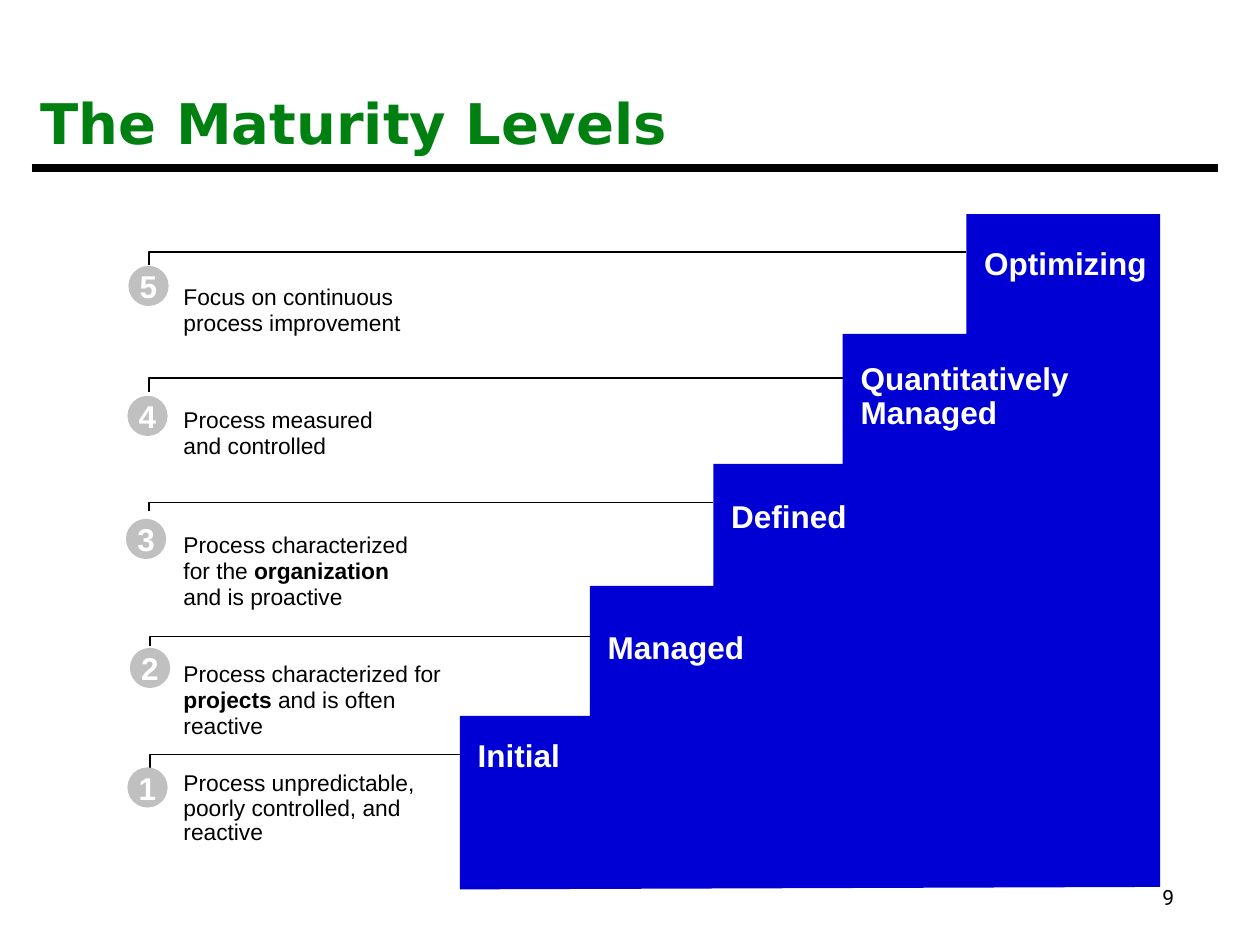
import pptx
import pptx.util
import pptx.dml.color
import pptx.enum.shapes
import pptx.enum.text
import pptx.oxml.ns
import lxml.etree

Cm = pptx.util.Cm
Pt = pptx.util.Pt

COLORS = {
    "title": "008011",
    "stair": "0000D4",
    "disc": "C0C0C0",
    "ink": "000000",
    "light": "FFFFFF",
}

LEVELS = [
    dict(number="5", name="Optimizing", step=(16.94, 0), label_top=0.28, label_width=3.86,
         disc=(0.05, 1.04), bracket=(0.46, 0.76), drop=0.26,
         note="Focus on continuous process improvement", note_top=1.29, note_width=6.32),
    dict(number="4", name="Quantitatively\nManaged", step=(14.45, 2.41), label_top=2.87,
         label_width=4.85, label_spacing=0.9,
         disc=(0.03, 3.66), bracket=(0.46, 3.3), drop=0.28,
         note="Process measured\vand controlled", note_top=3.78, note_width=5.74),
    dict(number="3", name="Defined", step=(11.84, 5.03), label_top=5.38, label_width=3.58,
         disc=(0, 6.14), bracket=(0.46, 5.81), drop=0.18,
         note="Process characterized for the *organization *and is proactive",
         note_top=6.3, note_width=5.44),
    dict(number="2", name="Managed", step=(9.35, 7.49), label_top=8.02, label_width=4.45,
         disc=(0.08, 8.74), bracket=(0.48, 8.51), drop=0.2,
         note="Process characterized for *projects* and is often reactive",
         note_top=8.89, note_width=6.02),
    dict(number="1", name="Initial", step=(6.73, 10.11), label_top=10.21, label_width=4.29,
         disc=(0.03, 11.15), bracket=(0.48, 10.89), drop=0.28,
         note="Process unpredictable, poorly controlled, and\nreactive",
         note_top=11.12, note_width=5.94, note_spacing=0.9),
]


def color(name):
    return pptx.dml.color.RGBColor.from_string(COLORS[name])


def format_text(frame, size, ink, bold=False, font="Arial", spacing=1.0, align="LEFT"):
    for para in frame.paragraphs:
        para.line_spacing = spacing
        para.alignment = getattr(pptx.enum.text.PP_ALIGN, align)
        for span in para.runs:
            span.font.name = font
            span.font.size = Pt(size)
            span.font.bold = bold
            span.font.color.rgb = color(ink)


def add_text(page, left, top, width, height, text, **style):
    box = page.shapes.add_textbox(Cm(left), Cm(top), Cm(width), Cm(height))
    box.text_frame.word_wrap = True
    box.text_frame.text = text
    format_text(box.text_frame, **style)
    return box


def add_outline(page, points, close):
    corners = [(Cm(x), Cm(y)) for x, y in points]
    builder = page.shapes.build_freeform(*corners[0], scale=1.0)
    builder.add_line_segments(corners[1:], close=close)
    outline = builder.convert_to_shape()
    outline.shadow.inherit = False
    return outline


def add_header(page, left, top, width, height):
    title = page.shapes.title
    title.left, title.top = Cm(left), Cm(top)
    title.width, title.height = Cm(19.89), Cm(1.32)
    frame = title.text_frame
    frame.margin_left = frame.margin_right = Cm(0.18)
    frame.margin_top = frame.margin_bottom = Cm(0.08)
    frame.vertical_anchor = pptx.enum.text.MSO_ANCHOR.MIDDLE
    frame.text = "The Maturity Levels"
    format_text(frame, 32, "title", True, "DejaVu Sans", 0.87)

    rule = page.shapes.add_connector(
        pptx.enum.shapes.MSO_CONNECTOR.STRAIGHT,
        Cm(left), Cm(top + height), Cm(left + width), Cm(top + height))
    rule.line.color.rgb = color("ink")
    rule.line.width = Pt(4.5)
    lxml.etree.SubElement(rule._element.spPr, pptx.oxml.ns.qn("a:effectLst"))


def add_staircase(page, left, top, width, height):
    right, bottom = left + width, top + height
    points = [(right, bottom - 0.05), (right, top)]
    for level in LEVELS:
        x, y = left + level["step"][0], top + level["step"][1]
        points += [(x, points[-1][1]), (x, y)] if y > top else [(x, y)]
    rising = [points[0], points[1], points[2]]
    for level in LEVELS[1:]:
        x, y = left + level["step"][0], top + level["step"][1]
        rising += [(rising[-1][0], y), (x, y)]
    rising.append((rising[-1][0], bottom))
    stair = add_outline(page, rising, True)
    stair.fill.solid()
    stair.fill.fore_color.rgb = color("stair")
    stair.line.fill.background()


def add_bracket(page, left, top, level):
    x, y = left + level["bracket"][0], top + level["bracket"][1]
    points = [(x, y + level["drop"]), (x, y), (left + level["step"][0], y)]
    bracket = add_outline(page, points, False)
    bracket.fill.background()
    bracket.line.color.rgb = color("ink")
    bracket.line.width = Pt(1)


def add_level(page, left, top, level):
    x, y = level["disc"]
    disc = page.shapes.add_shape(
        pptx.enum.shapes.MSO_SHAPE.OVAL, Cm(left + x), Cm(top + y), Cm(0.81), Cm(0.81))
    disc.shadow.inherit = False
    disc.fill.solid()
    disc.fill.fore_color.rgb = color("disc")
    disc.line.fill.background()
    frame = disc.text_frame
    frame.margin_left = frame.margin_right = frame.margin_top = frame.margin_bottom = 0
    frame.word_wrap = False
    frame.vertical_anchor = pptx.enum.text.MSO_ANCHOR.MIDDLE
    frame.text = level["number"]
    format_text(frame, 18, "light", True, align="CENTER")

    first, *others = level["note"].split("*")
    note = add_text(page, left + 0.91, top + level["note_top"], level["note_width"], 1.85,
                    first, size=13, ink="ink")
    for text in others:
        note.text_frame.paragraphs[0].add_run().text = text
    format_text(note.text_frame, 13, "ink", spacing=level.get("note_spacing", 0.95))
    if others:
        note.text_frame.paragraphs[0].runs[1].font.bold = True

    add_text(page, left + level["step"][0] + 0.11, top + level["label_top"],
             level["label_width"], 1.19, level["name"], size=18, ink="light", bold=True,
             spacing=level.get("label_spacing", 1.25))


def add_diagram(page, left, top, width, height):
    for level in LEVELS:
        add_bracket(page, left, top, level)
    add_staircase(page, left, top, width, height)
    for level in LEVELS:
        add_level(page, left, top, level)


def main():
    deck = pptx.Presentation()
    deck.slide_width, deck.slide_height = Cm(25.4), Cm(19.05)
    page = deck.slides.add_slide(deck.slide_layouts[5])
    add_header(page, 0.64, 1.91, 23.92, 1.47)
    add_diagram(page, 2.54, 4.32, 20.85, 13.61)
    add_text(page, 18.64, 17.7, 5.28, 0.91, "9",
             size=12, ink="ink", font="Roboto", align="RIGHT")
    deck.save("out.pptx")


if __name__ == "__main__":
    main()
